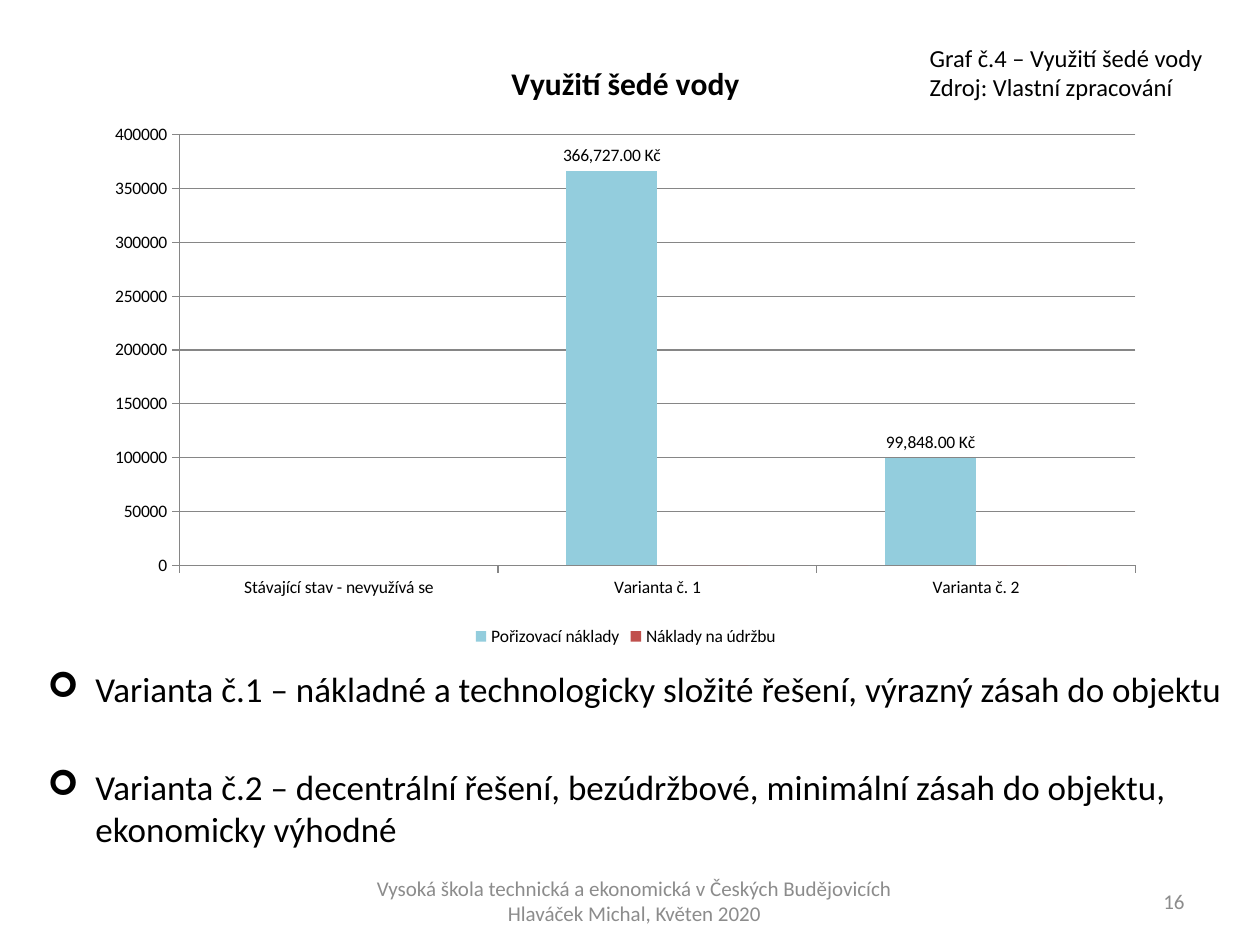
from lxml import etree
from pptx import Presentation
from pptx.chart.data import CategoryChartData
from pptx.dml.color import RGBColor
from pptx.enum.chart import XL_CHART_TYPE, XL_LABEL_POSITION, XL_LEGEND_POSITION, XL_TICK_MARK
from pptx.enum.text import MSO_ANCHOR, PP_ALIGN
from pptx.oxml.ns import qn
from pptx.util import Inches, Pt

THEME = {
    "font": "Calibri",
    "text": RGBColor(0, 0, 0),
    "muted": RGBColor(0x8C, 0x8C, 0x8C),
    "line": RGBColor(0x86, 0x86, 0x86),
    "purchase": RGBColor(0x93, 0xCD, 0xDD),
    "upkeep": RGBColor(0xC0, 0x50, 0x4D),
    "body_size": Pt(20),
    "title_size": Pt(18),
    "caption_size": Pt(14),
    "footer_size": Pt(12),
    "chart_size": Pt(10),
}

presentation = Presentation()
presentation.slide_width, presentation.slide_height = Inches(10), Inches(7.5)
slide = presentation.slides.add_slide(presentation.slide_layouts[6])

# Grid of 100 columns by 75 rows
column = presentation.slide_width / 100
row = presentation.slide_height / 75


def place(left, top, width, height):
    return [int(left * column), int(top * row), int(width * column), int(height * row)]


def add_text(area, lines, size, color, anchor=MSO_ANCHOR.TOP, bullet=None, **formats):
    frame = slide.shapes.add_textbox(*place(*area)).text_frame
    frame.word_wrap = True
    frame.vertical_anchor = anchor
    for index, line in enumerate(lines):
        paragraph = frame.paragraphs[0] if index == 0 else frame.add_paragraph()
        paragraph.text = line
        if bullet:
            properties = paragraph._p.get_or_add_pPr()
            properties.set("marL", str(Inches(0.38)))
            properties.set("indent", str(-Inches(0.38)))
            etree.SubElement(properties, qn("a:buFont"), typeface="Wingdings")
            etree.SubElement(properties, qn("a:buChar"), char=bullet)
            if index:
                paragraph.space_before = Pt(32)
        for name, value in formats.items():
            setattr(paragraph, name, value)
        font = paragraph.font
        font.name, font.size, font.color.rgb = THEME["font"], size, color


# Cost chart
chart_data = CategoryChartData()
chart_data.categories = ["Stávající stav - nevyužívá se", "Varianta č. 1", "Varianta č. 2"]
chart_data.add_series("Pořizovací náklady", [None, 366727, 99848])
chart_data.add_series("Náklady na údržbu", [None, 0, 0])
chart = slide.shapes.add_chart(
    XL_CHART_TYPE.COLUMN_CLUSTERED, *place(7.5, 2.9, 84.3, 48.8), chart_data
).chart
chart.font.name = THEME["font"]
chart.font.size = THEME["chart_size"]
chart.font.color.rgb = THEME["text"]

# Chart title and legend
chart.has_title = True
chart.chart_title.include_in_layout = False
title = chart.chart_title.text_frame
title.text = "Využití šedé vody"
title_format = {"name": THEME["font"], "size": THEME["title_size"], "bold": True}
for name, value in title_format.items():
    setattr(title.paragraphs[0].runs[0].font, name, value)
chart.has_legend = True
chart.legend.position = XL_LEGEND_POSITION.BOTTOM
chart.legend.include_in_layout = False

# Plot area as shares of the chart
plot_area = chart._chartSpace.chart.plotArea
for old_layout in plot_area.findall(qn("c:layout")):
    plot_area.remove(old_layout)
layout = etree.Element(qn("c:layout"))
manual = etree.SubElement(layout, qn("c:manualLayout"))
layout_values = {
    "layoutTarget": "inner", "xMode": "edge", "yMode": "edge",
    "x": "0.08", "y": "0.16", "w": "0.9", "h": "0.7",
}
for name, value in layout_values.items():
    etree.SubElement(manual, qn(f"c:{name}"), val=value)
plot_area.insert(0, layout)

# Columns and value labels
plot = chart.plots[0]
plot.vary_by_categories = False
plot.gap_width, plot.overlap = 150, 0
for series, color in zip(plot.series, (THEME["purchase"], THEME["upkeep"])):
    series.format.fill.solid()
    series.format.fill.fore_color.rgb = color
label_format = {
    "show_value": True,
    "number_format": '#,##0.00\\ "Kč"',
    "number_format_is_linked": False,
    "position": XL_LABEL_POSITION.OUTSIDE_END,
}
for name, value in label_format.items():
    setattr(plot.series[0].data_labels, name, value)

# Axes
value_axis = chart.value_axis
value_format = {
    "minimum_scale": 0, "maximum_scale": 400000, "major_unit": 50000,
    "has_major_gridlines": True,
}
for name, value in value_format.items():
    setattr(value_axis, name, value)
value_axis.tick_labels.number_format = "General"
value_axis.tick_labels.number_format_is_linked = False
for axis in (chart.category_axis, value_axis):
    axis.major_tick_mark = XL_TICK_MARK.OUTSIDE
for lined in (chart.category_axis, value_axis, value_axis.major_gridlines):
    lined.format.line.color.rgb = THEME["line"]
    lined.format.line.width = Pt(0.75)

# Caption
add_text((72.8, 2.9, 25.2, 5.7), ["Graf č.4 – Využití šedé vody", "Zdroj: Vlastní zpracování"],
         THEME["caption_size"], THEME["text"])

# Findings
findings = [
    "Varianta č.1 – nákladné a technologicky složité řešení, výrazný zásah do objektu",
    "Varianta č.2 – decentrální řešení, bezúdržbové, minimální zásah do objektu, "
    "ekonomicky výhodné",
]
add_text((2.8, 52.5, 95.3, 14.5), findings, THEME["body_size"], THEME["text"], bullet="➢")

# Footer and slide number
footer = "Vysoká škola technická a ekonomická v Českých Budějovicích Hlaváček Michal, Květen 2020"
for area, text, alignment in (
    ((28.7, 69.5, 43.3, 4), footer, PP_ALIGN.CENTER),
    ((71.7, 69.5, 23.3, 4), "16", PP_ALIGN.RIGHT),
):
    add_text(area, [text], THEME["footer_size"], THEME["muted"],
             anchor=MSO_ANCHOR.MIDDLE, alignment=alignment)

presentation.save("out.pptx")
